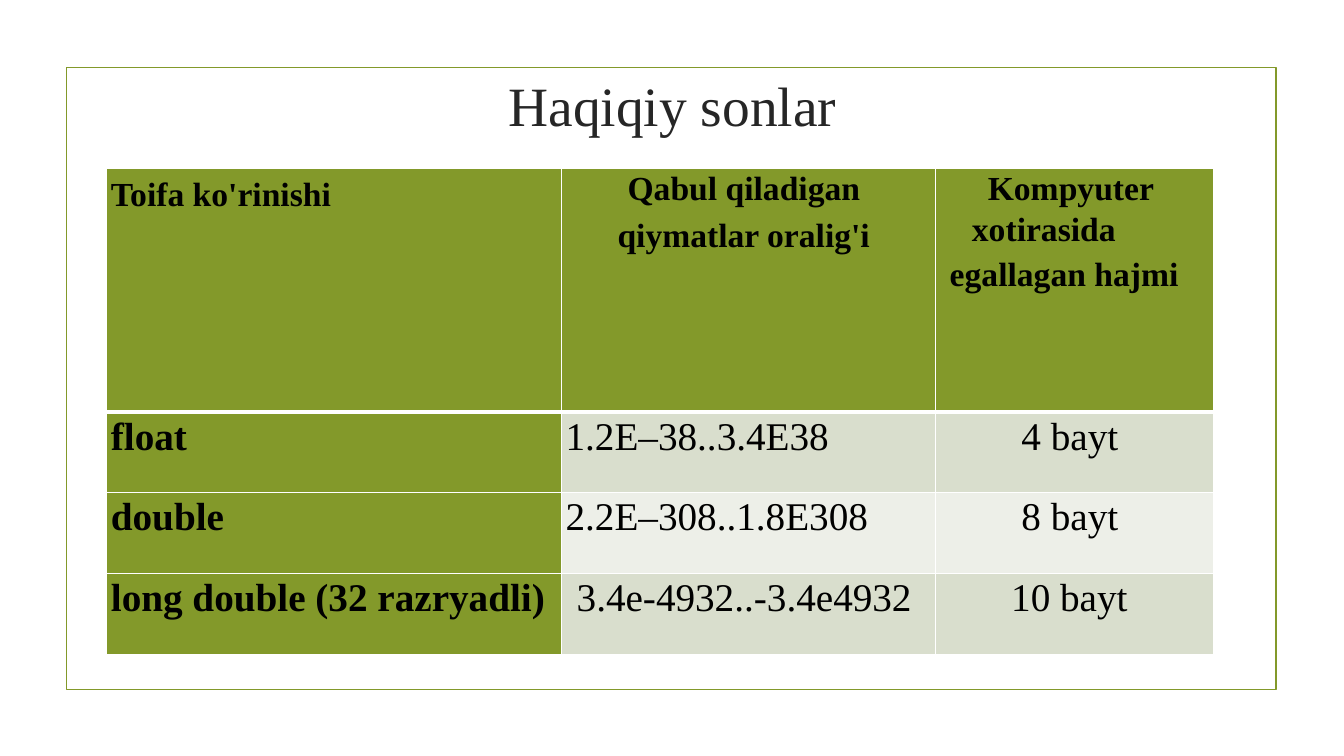
from dataclasses import dataclass

import pptx
import pptx.dml.color
import pptx.enum.shapes
import pptx.enum.text
import pptx.oxml.ns
import pptx.util
from lxml import etree
from pptx.util import Inches, Pt

ALIGN = pptx.enum.text.PP_ALIGN
L, C, J = ALIGN.LEFT, ALIGN.CENTER, ALIGN.JUSTIFY


@dataclass(frozen=True)
class Theme:
    font: str = "Times New Roman"
    green: str = "83992A"
    bands: tuple = ("D9DECD", "EDEFE8")
    white: str = "FFFFFF"
    black: str = "000000"
    title_color: str = "262626"
    title: float = 39.6
    header: float = 24
    body: float = 28


THEME = Theme()

# Paragraph: text, alignment, left margin, first-line indent, space after
HEADER = [
    [("Toifa ko'rinishi", L, 0.04, 0, 0)],
    [("Qabul qiladigan ", C, 0.03, 0, 1.4), ("qiymatlar oralig'i", C, 0.04, 0, 0)],
    [("Kompyuter ", C, 0.04, 0, 0.5), ("xotirasida egallagan hajmi", L, 0.14, 0.22, 0)],
]
BODY = [
    [("float", L, 0.04), ("1.2Е–38..3.4Е38", L, 0.04), ("4 bayt ", C, 0.04)],
    [("double", L, 0.04), ("2.2Е–308..1.8Е308", L, 0.04), ("8 bayt ", C, 0.04)],
    [("long double (32 razryadli)", J, 0.04), ("3.4e-4932..-3.4e4932 ", J, 0.15),
     ("10 bayt ", C, 0.03)],
]
COLUMNS = (4.51, 3.71, 2.76)
ROWS = (2.42, 0.8, 0.8, 0.8)


def rgb(color):
    return pptx.dml.color.RGBColor.from_string(color)


def style(font, size, color, bold=False):
    font.name, font.size, font.bold = THEME.font, Pt(size), bold
    font.color.rgb = rgb(color)


def add_frame(s):
    sp = s.shapes.add_shape(pptx.enum.shapes.MSO_SHAPE.RECTANGLE,
                            Inches(0.66), Inches(0.67), Inches(12), Inches(6.17))
    sp.shadow.inherit = False
    sp.fill.background()
    sp.line.color.rgb = rgb(THEME.green)
    sp.line.width = Pt(1.25)


def add_title(s, text):
    tf = s.shapes.add_textbox(Inches(1.42), Inches(0.68), Inches(10.5), Inches(0.71)).text_frame
    tf.word_wrap = True
    tf.vertical_anchor = pptx.enum.text.MSO_ANCHOR.MIDDLE
    p = tf.paragraphs[0]
    p.text, p.alignment = text, C
    style(p.font, THEME.title, THEME.title_color)


def set_borders(cell, top, bottom):
    tc_pr = cell._tc.get_or_add_tcPr()
    qn = pptx.oxml.ns.qn
    for tag, width in (("a:lnL", 1), ("a:lnR", 1), ("a:lnT", top), ("a:lnB", bottom)):
        ln = etree.SubElement(tc_pr, qn(tag), w=str(Pt(width)))
        fill = etree.SubElement(ln, qn("a:solidFill"))
        etree.SubElement(fill, qn("a:srgbClr"), val=THEME.white)


def write_paragraph(p, text, align, margin, indent, after, size, bold):
    p.alignment, p.line_spacing, p.space_after = align, 1.07, Pt(after)
    p_pr = p._p.get_or_add_pPr()
    p_pr.set("marL", str(Inches(margin)))
    p_pr.set("indent", str(Inches(indent)))
    style(p.font, size, THEME.black, bold)
    p.add_run().text = text


def fill_cell(cell, paragraphs, row, col):
    header = row == 0
    set_borders(cell, 3 if row == 1 else 1, 3 if header else 1)
    cell.margin_left = cell.margin_top = cell.margin_bottom = 0
    cell.margin_right = Inches(0.04)
    cell.fill.solid()
    green = header or col == 0
    cell.fill.fore_color.rgb = rgb(THEME.green if green else THEME.bands[(row - 1) % 2])
    tf = cell.text_frame
    for i, paragraph in enumerate(paragraphs):
        p = tf.add_paragraph() if i else tf.paragraphs[0]
        write_paragraph(p, *paragraph, THEME.header if header else THEME.body, green)
    if header:  # each heading ends in a larger space
        r = p.add_run()
        r.text = " "
        r.font.size = Pt(THEME.body)


def add_type_table(s):
    table = s.shapes.add_table(len(ROWS), len(COLUMNS), Inches(1.06), Inches(1.67),
                               Inches(sum(COLUMNS)), Inches(sum(ROWS))).table
    table.first_col = True
    for column, width in zip(table.columns, COLUMNS):
        column.width = Inches(width)
    for row, height in zip(table.rows, ROWS):
        row.height = Inches(height)
    rows = [HEADER] + [[[(*entry, 0, 0)] for entry in row] for row in BODY]
    for i, row in enumerate(rows):
        for j, paragraphs in enumerate(row):
            fill_cell(table.cell(i, j), paragraphs, i, j)


def main():
    prs = pptx.Presentation()
    prs.slide_width, prs.slide_height = Inches(13.33), Inches(7.5)
    s = prs.slides.add_slide(prs.slide_layouts[6])
    add_frame(s)
    add_title(s, "Haqiqiy sonlar")
    add_type_table(s)
    prs.save("out.pptx")


if __name__ == "__main__":
    main()
